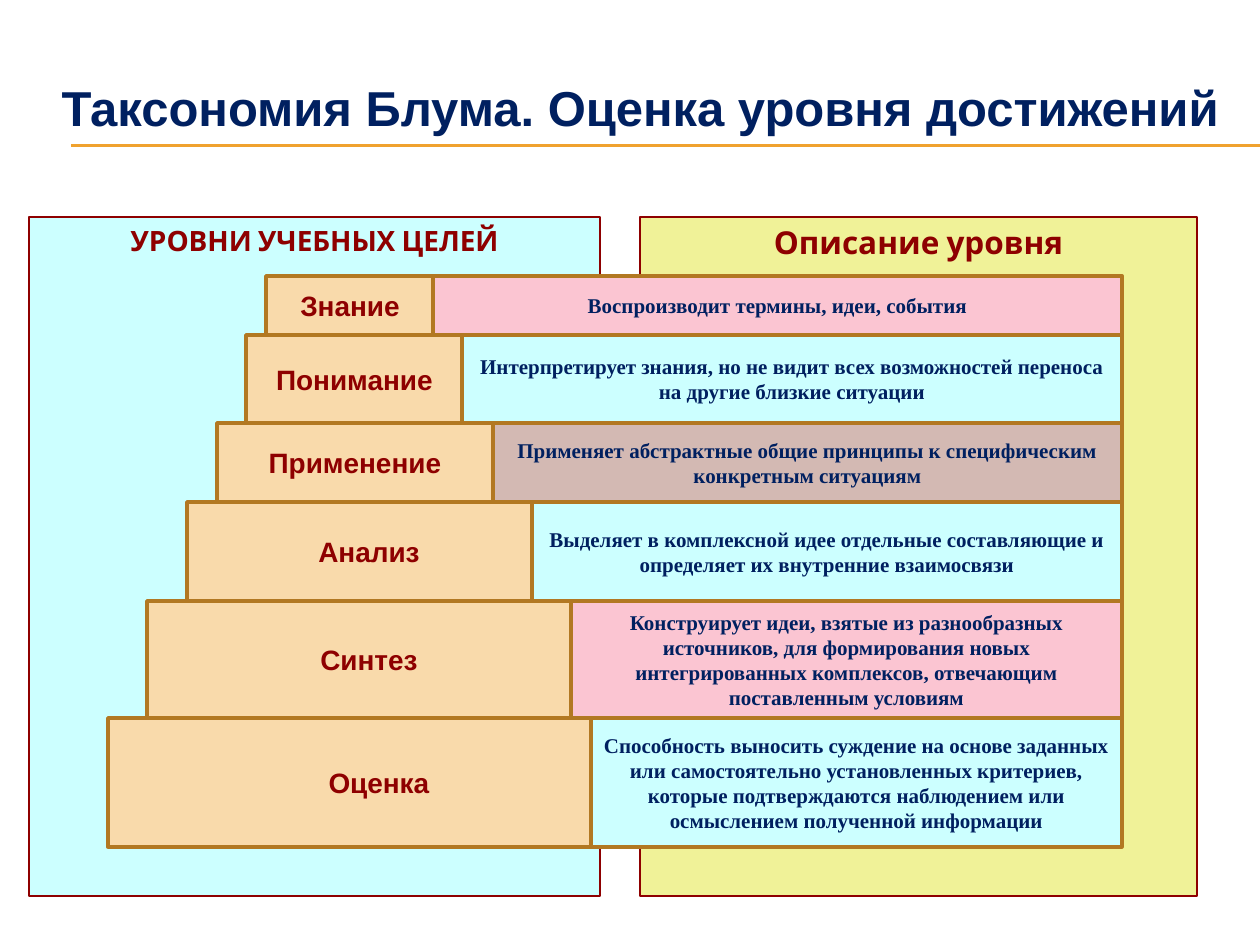
import pptx
import pptx.util
import pptx.dml.color
import pptx.enum.shapes
import pptx.enum.text
import pptx.oxml.ns
import lxml.etree

RGB = pptx.dml.color.RGBColor
NAVY = RGB(0x00, 0x20, 0x60)
MAROON = RGB(0x8E, 0x00, 0x00)
GOLD = RGB(0xF0, 0xA2, 0x2E)
BROWN = RGB(0xB2, 0x78, 0x22)
PEACH = RGB(0xF9, 0xDA, 0xAB)
CYAN = RGB(0xCC, 0xFF, 0xFF)
YELLOW = RGB(0xF0, 0xF2, 0x98)
PINK = RGB(0xFB, 0xC5, 0xD2)
MAUVE = RGB(0xD3, 0xB9, 0xB3)

TITLE = "Таксономия Блума. Оценка уровня достижений"
PANELS = [
    ("УРОВНИ УЧЕБНЫХ ЦЕЛЕЙ", 16, 29, 571, CYAN),
    ("Описание уровня", 18, 640, 557, YELLOW),
]
LEVELS = [
    ("Знание", 266, 168, 433, 276, PINK,
     "Воспроизводит термины, идеи, события"),
    ("Понимание", 246, 217, 462, 335, CYAN,
     "Интерпретирует знания, но не видит всех возможностей переноса "
     "на другие близкие ситуации"),
    ("Применение", 217, 276, 493, 423, MAUVE,
     "Применяет абстрактные общие принципы к специфическим "
     "конкретным ситуациям"),
    ("Анализ", 187, 364, 532, 502, CYAN,
     "Выделяет в комплексной идее отдельные составляющие и "
     "определяет их внутренние взаимосвязи"),
    ("Синтез", 147, 444, 571, 601, PINK,
     "Конструирует идеи, взятые из разнообразных источников, для "
     "формирования новых интегрированных комплексов, отвечающим "
     "поставленным условиям"),
    ("Оценка", 108, 542, 591, 718, CYAN,
     "Способность выносить суждение на основе заданных или "
     "самостоятельно установленных критериев, которые подтверждаются "
     "наблюдением или осмыслением полученной информации"),
]
STAIRS_RIGHT, STAIRS_BOTTOM = 1122, 847
PANEL_TOP, PANEL_HEIGHT = 217, 679
RULE_LEFT, RULE_TOPS = 71, (145, 146)
SLIDE_W, SLIDE_H = 1260, 945

LEFT = pptx.enum.text.PP_ALIGN.LEFT
CENTER = pptx.enum.text.PP_ALIGN.CENTER
TOP = pptx.enum.text.MSO_ANCHOR.TOP
MIDDLE = pptx.enum.text.MSO_ANCHOR.MIDDLE
qn = pptx.oxml.ns.qn


def px(n):
    return pptx.util.Emu(round(n * 914400 / 126))


def place(sp, x, y, w, h):
    sp.left, sp.top, sp.width, sp.height = px(x), px(y), px(w), px(h)


def paint(sp, fill, line, width):
    sp.fill.solid()
    sp.fill.fore_color.rgb = fill
    sp.line.color.rgb = line
    sp.line.width = pptx.util.Pt(width)


def write(sp, text, font, size, color, align, anchor):
    tf = sp.text_frame
    tf.text = text
    tf.word_wrap = True
    tf.auto_size = pptx.enum.text.MSO_AUTO_SIZE.NONE
    tf.vertical_anchor = anchor
    p = tf.paragraphs[0]
    p.alignment = align
    p.font.name, p.font.size, p.font.bold = font, pptx.util.Pt(size), True
    p.font.color.rgb = color
    return p


def add_box(s, x, y, w, h, fill, text, font, size, color):
    sp = s.shapes.add_shape(pptx.enum.shapes.MSO_SHAPE.RECTANGLE,
                            px(x), px(y), px(w), px(h))
    sp.shadow.inherit = False
    paint(sp, fill, BROWN, 2)
    write(sp, text, font, size, color, CENTER, MIDDLE)


prs = pptx.Presentation()
prs.slide_width, prs.slide_height = px(SLIDE_W), px(SLIDE_H)
s = prs.slides.add_slide(prs.slide_layouts[3])

place(s.shapes.title, 49, 49, 1197, 116)
write(s.shapes.title, TITLE, "Arial", 28, NAVY, LEFT, MIDDLE)

for y in RULE_TOPS:
    rule = s.shapes.add_connector(pptx.enum.shapes.MSO_CONNECTOR.STRAIGHT,
                                  px(RULE_LEFT), px(y), px(SLIDE_W), px(y))
    rule.line.color.rgb = GOLD
    rule.line.width = pptx.util.Pt(0.75)
    lxml.etree.SubElement(rule._element.spPr, qn("a:effectLst"))

for idx, (text, size, x, w, fill) in enumerate(PANELS, 1):
    panel = s.placeholders[idx]
    place(panel, x, PANEL_TOP, w, PANEL_HEIGHT)
    paint(panel, fill, MAROON, 1.5)
    p = write(panel, text, "Cabin", size, MAROON, CENTER, TOP)
    p._p.get_or_add_pPr().insert(0, lxml.etree.Element(qn("a:buNone")))

bottoms = [level[4] for level in LEVELS[1:]] + [STAIRS_BOTTOM]
for (label, x, w, _, y, _, _), bottom in zip(LEVELS, bottoms):
    add_box(s, x, y, w, bottom - y, PEACH, label, "Arial", 16, MAROON)
for (_, _, _, x, y, fill, text), bottom in zip(LEVELS, bottoms):
    add_box(s, x, y, STAIRS_RIGHT - x, bottom - y, fill, text,
            "Times New Roman", 12, NAVY)

prs.save("out.pptx")
